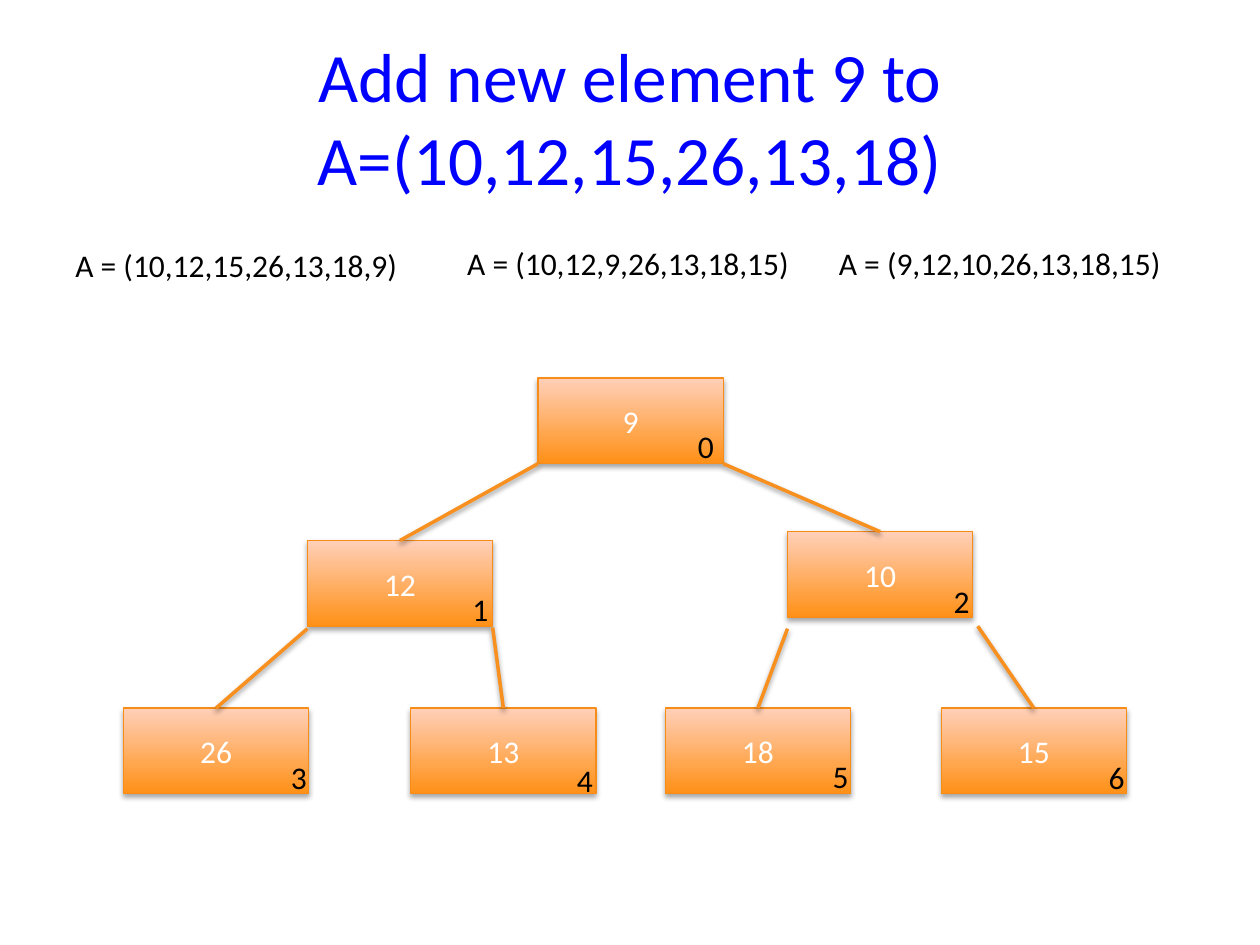
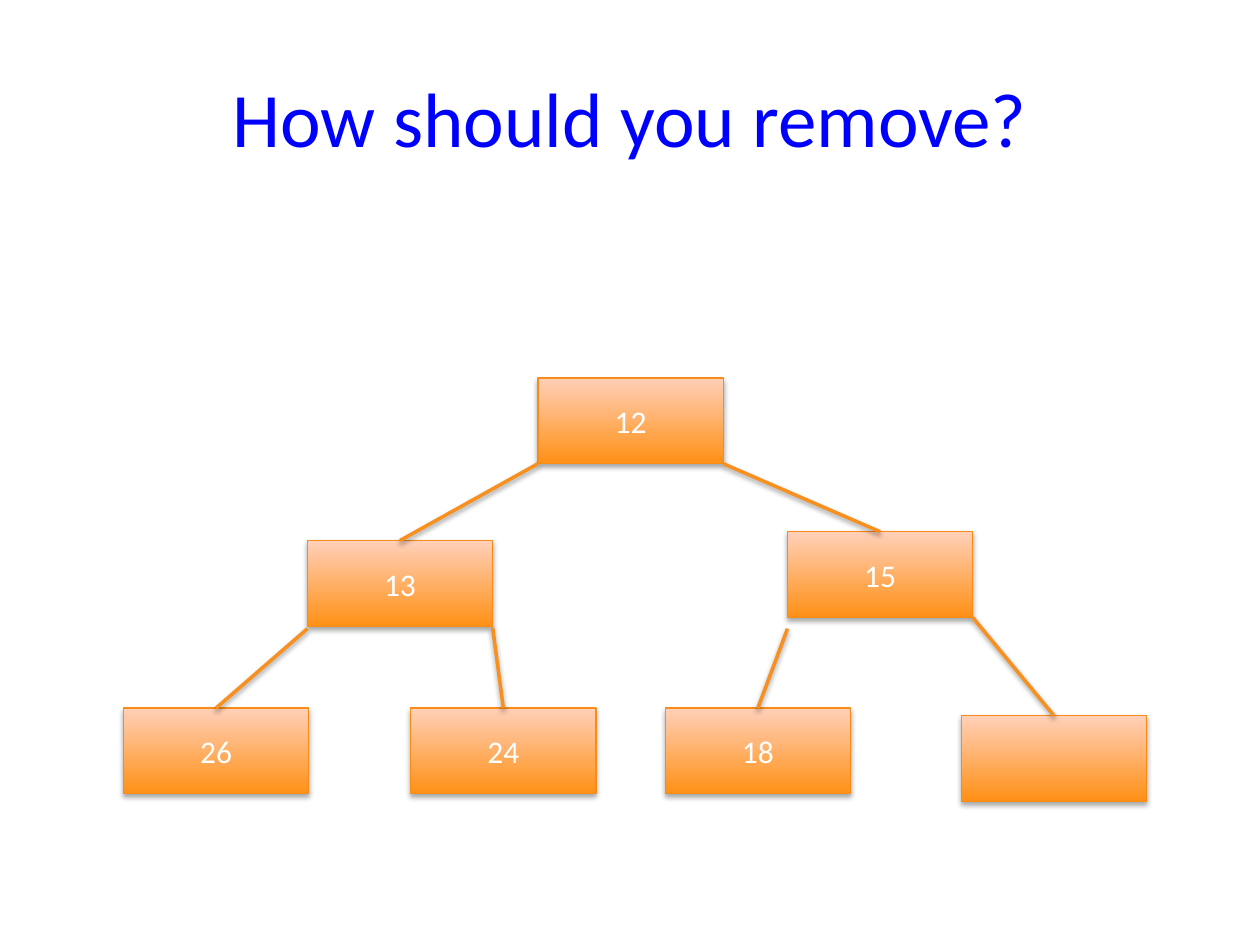
from dataclasses import dataclass, replace

from lxml import etree
from pptx import Presentation
from pptx import util as u
from pptx.dml.color import RGBColor
from pptx.enum import shapes, text
from pptx.oxml.ns import qn

COLORS = {
    "title": "0000FF", "node_bottom": "FF9016", "node_top": "FFD0B9",
    "node_line": "F78D18", "edge": "F7901E", "value": "FFFFFF",
    "ink": "000000", "shadow": "000000",
}
FONT = "Calibri"
BODY_PT = 18

# Grid: 100 columns by 75 rows on a 10 x 7.5 inch slide
SLIDE_W, SLIDE_H = u.Inches(10), u.Inches(7.5)
COL, ROW = SLIDE_W / 100, SLIDE_H / 75
NODE_W, NODE_H = 14.7, 6.8
LABEL_W, TEXT_H = 3.3, 4


@dataclass(frozen=True)
class Node:
    """A heap node: its place, its index label's offset and the gap
    between its parent's corner and the start of its edge."""
    col: float
    row: float
    label: tuple[float, float]
    gap: tuple[float, float] = (0, 0)


@dataclass(frozen=True)
class ArrayText:
    words: str
    col: float
    row: float


# Nodes in heap order: children of i are 2i + 1 and 2i + 2
HEAP = [
    Node(42.7, 30, (11.7, 3.4)),
    Node(24.4, 42.9, (12.1, 3.4)),
    Node(62.5, 42.2, (12.2, 3.5)),
    Node(9.8, 56.2, (12.3, 3.5), (0, 0.2)),
    Node(32.6, 56.2, (12.2, 3.7), (0, 0.1)),
    Node(52.8, 56.2, (12.3, 3.4), (0, 0.9)),
    Node(74.7, 56.2, (12.3, 3.5), (0.4, 0.7)),
]
REMOVAL_HEAP = HEAP[:-1] + [replace(HEAP[-1], col=76.3, row=56.8, gap=(0, 0))]

ARRAYS = [
    ArrayText("A = (10,12,15,26,13,18,9)", 5, 19),
    ArrayText("A = (10,12,9,26,13,18,15)", 36.1, 18.9),
    ArrayText("A = (9,12,10,26,13,18,15)", 65.6, 18.9),
]


def rgb(name: str) -> RGBColor:
    return RGBColor.from_string(COLORS[name])


def grid(*cells: float) -> list[int]:
    """Turn alternating columns and rows into slide lengths."""
    return [round(c * (ROW if i % 2 else COL)) for i, c in enumerate(cells)]


def style(p, size: float, color: str) -> None:
    p.font.name, p.font.size = FONT, u.Pt(size)
    p.font.color.rgb = rgb(color)


def add_shadow(sp, opacity: int, distance: float) -> None:
    effects = etree.SubElement(sp._element.spPr, qn("a:effectLst"))
    outer = etree.SubElement(effects, qn("a:outerShdw"), {
        "blurRad": str(u.Pt(3.1)), "dist": str(u.Pt(distance)),
        "dir": "5400000", "rotWithShape": "0"})
    color = etree.SubElement(outer, qn("a:srgbClr"), val=COLORS["shadow"])
    etree.SubElement(color, qn("a:alpha"), val=str(opacity * 1000))


def add_title(s, words: str, size: float) -> None:
    sp = s.shapes.title
    sp.left, sp.top, sp.width, sp.height = grid(5, 3, 90, 12.5)
    tf = sp.text_frame
    tf.text = words
    tf.auto_size = text.MSO_AUTO_SIZE.NONE
    tf.vertical_anchor = text.MSO_ANCHOR.MIDDLE
    tf.paragraphs[0].alignment = text.PP_ALIGN.CENTER
    style(tf.paragraphs[0], size, "title")


def add_text(s, words: str, col: float, row: float, width: float) -> None:
    tf = s.shapes.add_textbox(*grid(col, row, width, TEXT_H)).text_frame
    tf.word_wrap = False
    tf.auto_size = text.MSO_AUTO_SIZE.SHAPE_TO_FIT_TEXT
    tf.text = words
    style(tf.paragraphs[0], BODY_PT, "ink")


def add_node(s, node: Node, value: str):
    sp = s.shapes.add_shape(shapes.MSO_SHAPE.RECTANGLE,
                            *grid(node.col, node.row, NODE_W, NODE_H))
    sp.fill.gradient()
    sp.fill.gradient_angle = 90
    for stop, name in zip(sp.fill.gradient_stops, ("node_bottom", "node_top")):
        stop.color.rgb = rgb(name)
    sp.line.color.rgb, sp.line.width = rgb("node_line"), u.Pt(0.75)
    add_shadow(sp, 35, 1.8)
    if value:
        tf = sp.text_frame
        tf.text = value
        tf.vertical_anchor = text.MSO_ANCHOR.MIDDLE
        tf.paragraphs[0].alignment = text.PP_ALIGN.CENTER
        style(tf.paragraphs[0], BODY_PT, "value")
    return sp


def add_edge(s, parent: Node, child: Node, child_box, right: bool) -> None:
    """Run from the parent's bottom corner to the child's top middle."""
    start = grid(parent.col + right * NODE_W + child.gap[0],
                 parent.row + NODE_H + child.gap[1])
    line = s.shapes.add_connector(shapes.MSO_CONNECTOR.STRAIGHT, *start, *start)
    line.end_connect(child_box, 0)
    line.line.color.rgb, line.line.width = rgb("edge"), u.Pt(2)
    add_shadow(line, 38, 1.6)


def add_heap(s, nodes: list[Node], values: list[str], labelled: bool) -> None:
    boxes = [add_node(s, n, v) for n, v in zip(nodes, values)]
    for i in range(1, len(nodes)):
        add_edge(s, nodes[(i - 1) // 2], nodes[i], boxes[i], i % 2 == 0)
    if labelled:
        for i, n in enumerate(nodes):
            add_text(s, str(i), n.col + n.label[0], n.row + n.label[1], LABEL_W)


def main() -> None:
    prs = Presentation()
    prs.slide_width, prs.slide_height = SLIDE_W, SLIDE_H
    title_only = prs.slide_layouts[5]

    # Insertion
    s = prs.slides.add_slide(title_only)
    add_title(s, "Add new element 9 to A=(10,12,15,26,13,18)", 39.6)
    add_heap(s, HEAP, ["9", "12", "10", "26", "13", "18", "15"], labelled=True)
    for a in ARRAYS:
        add_text(s, a.words, a.col, a.row, 27.9)

    # Removal
    s = prs.slides.add_slide(title_only)
    add_title(s, "How should you remove?", 44)
    add_heap(s, REMOVAL_HEAP, ["12", "13", "15", "26", "24", "18", ""],
             labelled=False)

    prs.save("out.pptx")


if __name__ == "__main__":
    main()
